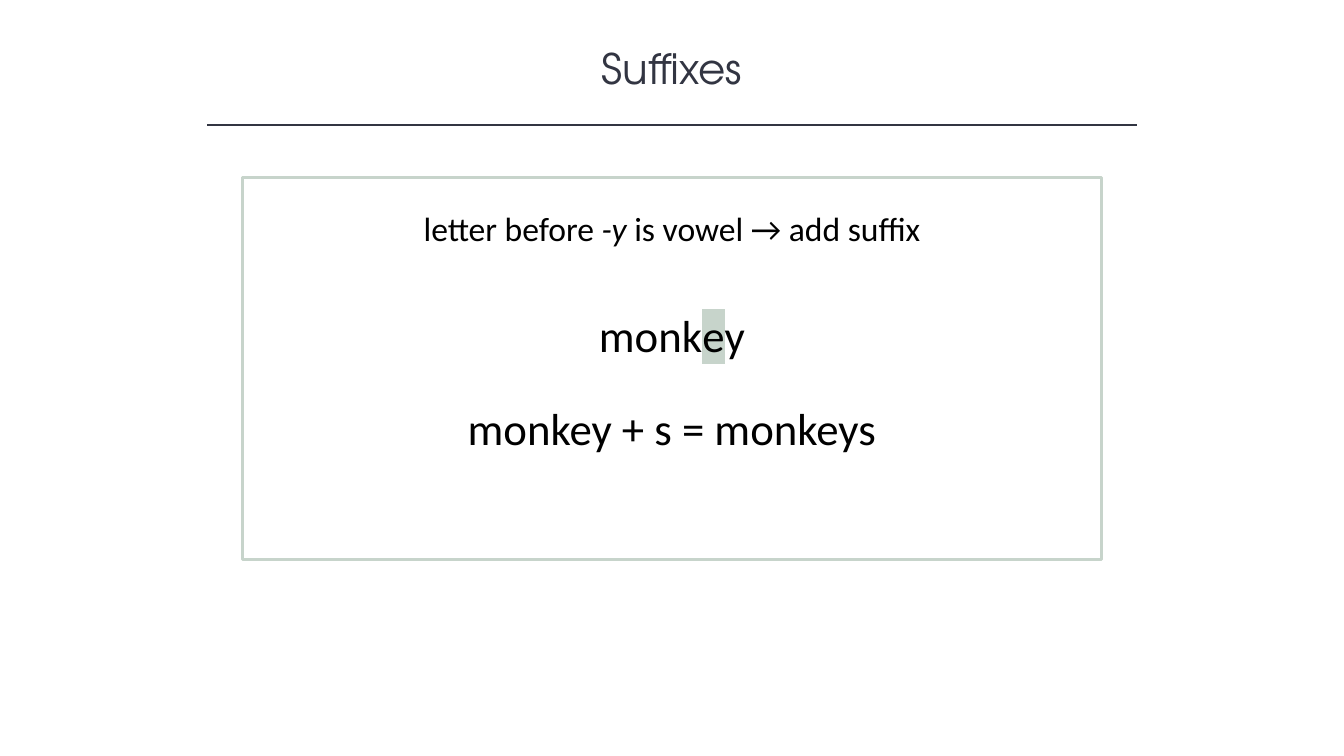
import pptx
import pptx.util
import pptx.dml.color
import pptx.enum.shapes
import pptx.enum.text
import pptx.oxml.ns
import lxml.etree

Cm = pptx.util.Cm
Pt = pptx.util.Pt
INK = pptx.dml.color.RGBColor(0x32, 0x35, 0x42)
SAGE = pptx.dml.color.RGBColor(0xC7, 0xD4, 0xCB)
BLACK = pptx.dml.color.RGBColor(0, 0, 0)
WIDE, HIGH = 33.87, 19.05


class Page:
    """Holds the style and the current slide; all parts are centred."""
    head = "TeX Gyre Adventor"
    body = "Calibri"

    def __init__(self, deck):
        self.slide = deck.slides.add_slide(deck.slide_layouts[5])
        self.shapes = self.slide.shapes

    def place(self, shape, top, width, height):
        shape.left, shape.top = Cm((WIDE - width) / 2), Cm(top)
        shape.width, shape.height = Cm(width), Cm(height)

    def style(self, run, font, size, color):
        run.font.name, run.font.size = font, Pt(size)
        run.font.color.rgb = color

    def title(self, text, top, width, height):
        shape = self.shapes.title
        self.place(shape, top, width, height)
        frame = shape.text_frame
        frame.text = text
        frame.auto_size = pptx.enum.text.MSO_AUTO_SIZE.NONE
        frame.vertical_anchor = pptx.enum.text.MSO_ANCHOR.TOP
        para = frame.paragraphs[0]
        para.alignment = pptx.enum.text.PP_ALIGN.CENTER
        self.style(para.runs[0], self.head, 30, INK)

    def rule(self, top, width):
        left = (WIDE - width) / 2
        line = self.shapes.add_connector(
            pptx.enum.shapes.MSO_CONNECTOR.STRAIGHT,
            Cm(left), Cm(top), Cm(left + width), Cm(top))
        line.line.color.rgb, line.line.width = INK, Pt(1)
        lxml.etree.SubElement(line._element.spPr,
                              pptx.oxml.ns.qn("a:effectLst"))

    def frame(self, top, width, height):
        box = self.shapes.add_shape(
            pptx.enum.shapes.MSO_SHAPE.RECTANGLE, 0, 0, 0, 0)
        self.place(box, top, width, height)
        box.shadow.inherit = False
        box.fill.background()
        box.line.color.rgb, box.line.width = SAGE, Pt(2.25)

    def text(self, parts, size, top, width, height, wrap=False):
        box = self.shapes.add_textbox(0, 0, 0, 0)
        self.place(box, top, width, height)
        box.text_frame.word_wrap = wrap
        para = box.text_frame.paragraphs[0]
        para.alignment = pptx.enum.text.PP_ALIGN.CENTER
        for part in parts:
            run = para.add_run()
            run.text = part
            self.style(run, self.body, size, BLACK)
        return para.runs

    def mark(self, run, color):
        """Highlight a run; the tag must follow the fill."""
        qn = pptx.oxml.ns.qn
        fill = run._r.get_or_add_rPr().find(qn("a:solidFill"))
        tag = lxml.etree.Element(qn("a:highlight"))
        lxml.etree.SubElement(tag, qn("a:srgbClr"), val=str(color))
        fill.addnext(tag)


def main():
    deck = pptx.Presentation()
    deck.slide_width, deck.slide_height = Cm(WIDE), Cm(HIGH)
    page = Page(deck)

    # Heading
    page.title("Suffixes", 0.94, 25.4, 1.55)
    page.rule(3.15, 23.42)

    # Spelling rule in its frame
    runs = page.text(["letter before ", "-y", " is vowel → add suffix"],
                     24, 5.11, 21.64, 1.27, wrap=True)
    runs[1].font.italic = True
    page.frame(4.47, 21.64, 9.63)

    # Example word, with the vowel marked
    page.text(["monkey + s = monkeys"], 32, 9.98, 10.9, 1.63)
    runs = page.text(["monk", "e", "y"], 32, 7.62, 4.19, 1.63)
    page.mark(runs[1], SAGE)

    deck.save("out.pptx")


if __name__ == "__main__":
    main()
